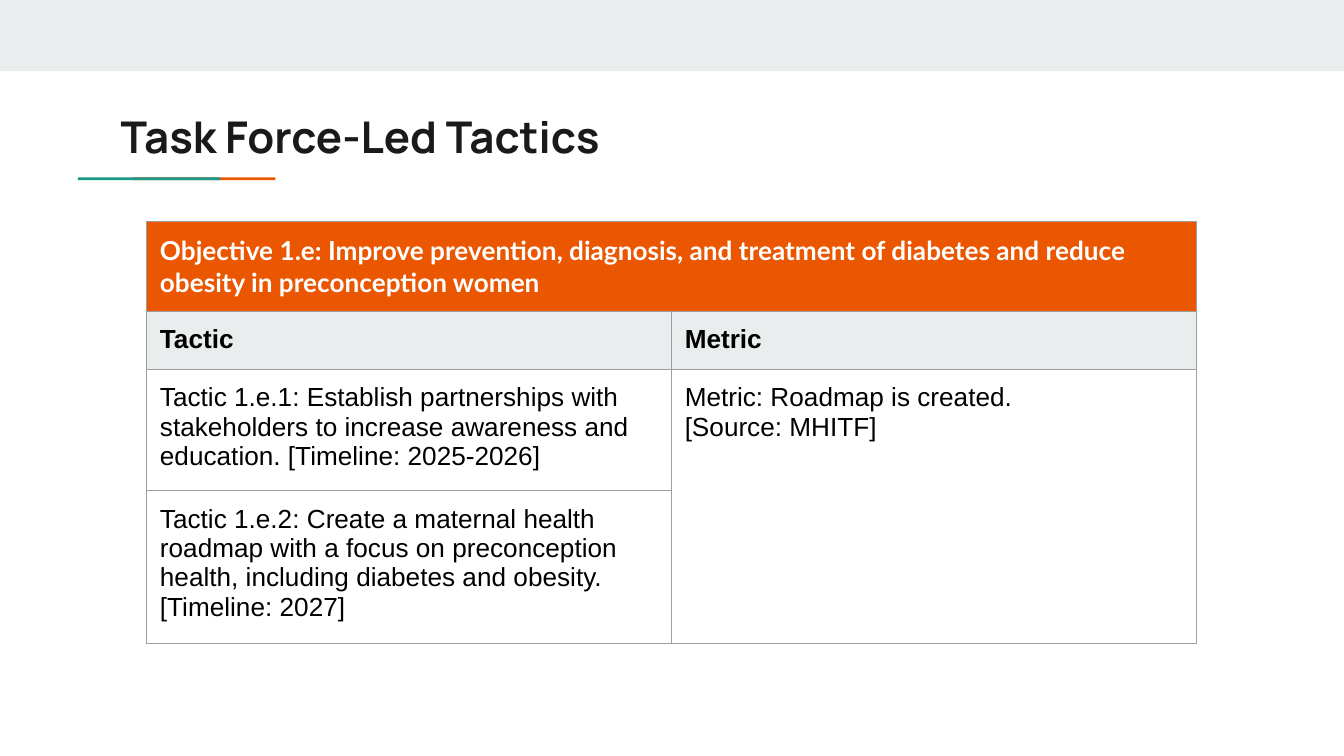
from pptx import Presentation
from pptx.dml.color import RGBColor
from pptx.enum.shapes import MSO_SHAPE
from pptx.enum.text import MSO_ANCHOR
from pptx.oxml import parse_xml
from pptx.oxml.ns import nsdecls
from pptx.util import Inches, Pt

WHITE = RGBColor(0xFF, 0xFF, 0xFF)
BLACK = RGBColor(0x00, 0x00, 0x00)
INK = RGBColor(0x1A, 0x1A, 0x1A)
PALE = RGBColor(0xE9, 0xED, 0xEE)
ORANGE = RGBColor(0xEB, 0x56, 0x00)
TEAL = RGBColor(0x1A, 0x99, 0x88)
BORDER = RGBColor(0x9E, 0x9E, 0x9E)


def style_text(p, font, size, color, bold):
    p.font.name = font
    p.font.size = Pt(size)
    p.font.color.rgb = color
    p.font.bold = bold


def set_borders(cell):
    tcPr = cell._tc.get_or_add_tcPr()
    for i, side in enumerate(("lnL", "lnR", "lnT", "lnB")):
        tcPr.insert(i, parse_xml(
            f'<a:{side} {nsdecls("a")} w="{Pt(0.75)}"><a:solidFill>'
            f'<a:srgbClr val="{BORDER}"/></a:solidFill></a:{side}>'))


prs = Presentation()
prs.slide_width = Inches(10)
prs.slide_height = Inches(10 * 9 / 16)
s = prs.slides.add_slide(prs.slide_layouts[6])

for x, y, w, h, color in [
    (0, 0, 10, 0.53, PALE),
    (0.99, 1.32, 1.06, 0.02, ORANGE),
    (0.58, 1.32, 1.06, 0.02, TEAL),
]:
    sp = s.shapes.add_shape(MSO_SHAPE.RECTANGLE, Inches(x), Inches(y), Inches(w), Inches(h))
    sp.shadow.inherit = False
    sp.fill.solid()
    sp.fill.fore_color.rgb = color
    sp.line.fill.background()

title = s.shapes.add_textbox(Inches(0.8), Inches(0.72), Inches(8.41), Inches(0.59))
tf = title.text_frame
tf.word_wrap = True
tf.vertical_anchor = MSO_ANCHOR.MIDDLE
tf.margin_left = tf.margin_right = tf.margin_top = tf.margin_bottom = Inches(0.1)
p = tf.paragraphs[0]
p.text = "Task Force-Led Tactics"
style_text(p, "Manrope", 23.4, INK, True)

rows = [
    ["Objective 1.e: Improve prevention, diagnosis, and treatment of diabetes and reduce obesity in preconception women", ""],
    ["Tactic", "Metric"],
    ["Tactic 1.e.1: Establish partnerships with stakeholders to increase awareness and education. [Timeline: 2025-2026]",
     "Metric: Roadmap is created.\n[Source: MHITF]"],
    ["Tactic 1.e.2: Create a maternal health roadmap with a focus on preconception\n"
     "health, including diabetes and obesity. [Timeline: 2027]", ""],
]
row_styles = [
    (ORANGE, "Lato", WHITE, True),
    (PALE, "Arial", BLACK, True),
    (None, "Arial", BLACK, False),
    (None, "Arial", BLACK, False),
]

frame = s.shapes.add_table(4, 2, Inches(1.09), Inches(1.65), Inches(7.81), Inches(3.13))
table = frame.table
table.first_row = False
table.horz_banding = False
for r, (texts, (fill, font, color, bold)) in enumerate(zip(rows, row_styles)):
    table.rows[r].height = Inches(0.42)
    for c, text in enumerate(texts):
        cell = table.cell(r, c)
        cell.margin_left = cell.margin_right = cell.margin_top = cell.margin_bottom = Inches(0.1)
        if fill is None:
            cell.fill.background()
        else:
            cell.fill.solid()
            cell.fill.fore_color.rgb = fill
        set_borders(cell)
        cell.text_frame.text = text
        for p in cell.text_frame.paragraphs:
            style_text(p, font, 14, color, bold)
table.cell(0, 0).merge(table.cell(0, 1))
table.cell(2, 1).merge(table.cell(3, 1))
frame.height = Inches(3.13)

prs.save("out.pptx")
